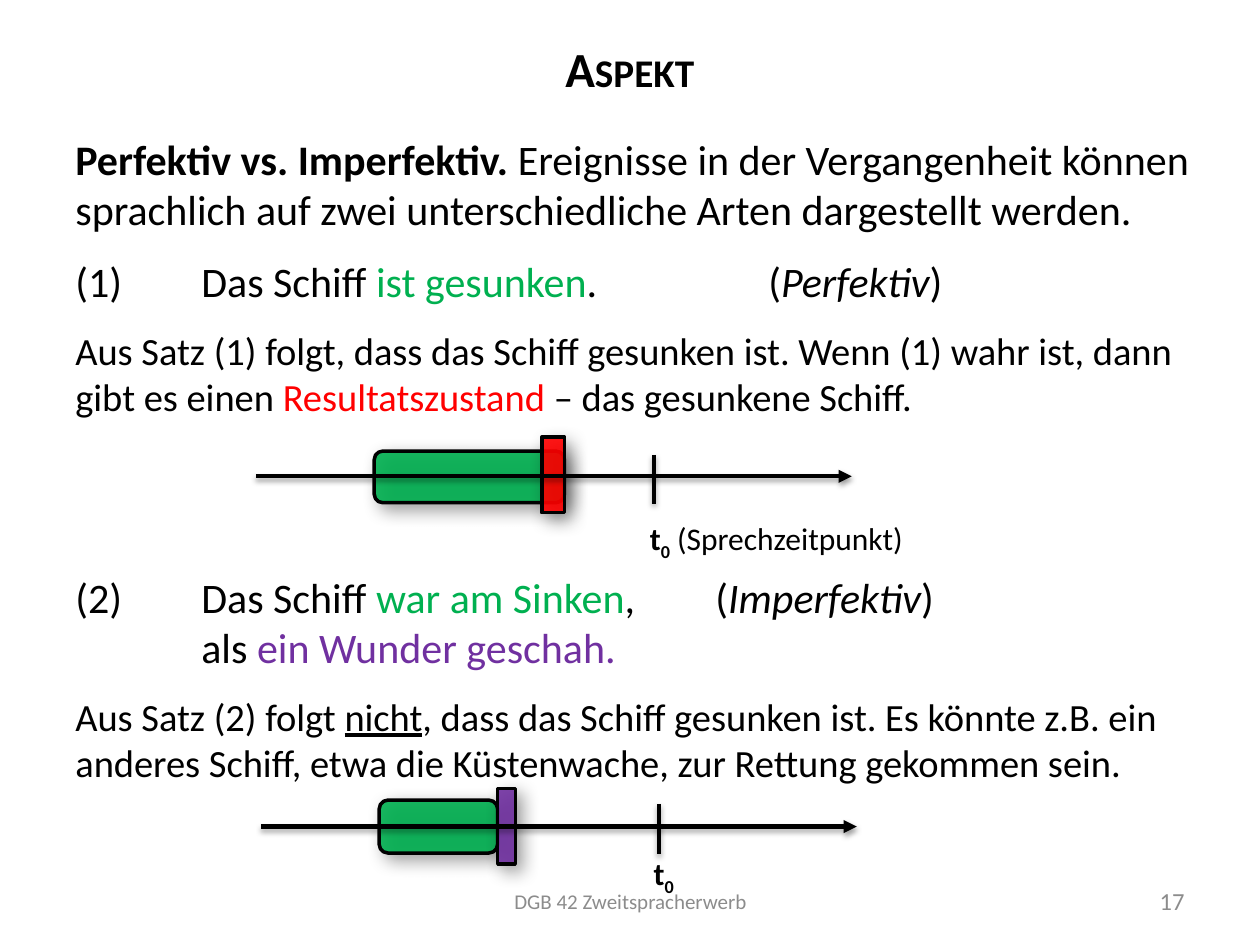
"""Build the slide on perfective and imperfective aspect."""
from dataclasses import dataclass

from lxml import etree
from pptx import Presentation
from pptx import util as u
from pptx.dml.color import RGBColor
from pptx.enum import shapes, text
from pptx.oxml.ns import qn

INK = {"black": "000000", "green": "00B050", "red": "FF0000",
       "violet": "7030A0", "grey": "8C8C8C"}
BOLD, ITAL = {"bold": True}, {"italic": True}
SUB = {"bold": True, "base": "-25000"}
LEFT, MID, RIGHT = text.PP_ALIGN.LEFT, text.PP_ALIGN.CENTER, text.PP_ALIGN.RIGHT
TOP, HALF = text.MSO_ANCHOR.TOP, text.MSO_ANCHOR.MIDDLE
BOX, LINE = (10, 5, 45, 40), (3.1, 1.6, 90, 38)


@dataclass
class Para:
    runs: list
    size: float
    before: float = 0
    tabs: tuple = ()
    align: int = LEFT


@dataclass
class Bar:
    kind: int
    hue: str
    at: tuple


@dataclass
class Axis:
    left: float
    y: float
    tick: tuple
    bars: list
    label: list
    spot: tuple


def color(name: str) -> RGBColor:
    """Look up a colour."""
    return RGBColor.from_string(INK[name])


def write(frame, paras: list, hue: str = "black", anchor=TOP) -> None:
    """Fill a text frame with formatted paragraphs."""
    frame.word_wrap, frame.vertical_anchor = True, anchor
    for i, item in enumerate(paras):
        para = frame.paragraphs[0] if i == 0 else frame.add_paragraph()
        para.alignment, para.space_before = item.align, u.Pt(item.before)
        if item.tabs:
            stops = etree.SubElement(para._p.get_or_add_pPr(), qn("a:tabLst"))
            for stop in item.tabs:
                etree.SubElement(stops, qn("a:tab"), pos=str(u.Inches(stop)), algn="l")
        for words, look in item.runs:
            if words == "\n":
                para.add_line_break()
                continue
            run = para.add_run()
            run.text = words
            style = {"name": "Calibri", "size": u.Pt(item.size), "bold": False, **look}
            run.font.color.rgb = color(style.pop("hue", hue))
            for key, raw in (("base", "baseline"), ("cap", "cap")):
                if key in style:
                    run.font._element.set(raw, style.pop(key))
            for key, value in style.items():
                setattr(run.font, key, value)


def label(home, at: tuple, paras: list, hue: str = "black", anchor=TOP) -> None:
    """Add a text box."""
    box = home.add_textbox(*map(u.Inches, at))
    write(box.text_frame, paras, hue, anchor)


def shade(shape, blur: float, dist: float, angle: int, alpha: int) -> None:
    """Give a shape an outer shadow."""
    prop = shape._element.spPr
    for old in prop.findall(qn("a:effectLst")):
        prop.remove(old)
    glow = etree.SubElement(etree.SubElement(prop, qn("a:effectLst")), qn("a:outerShdw"),
                            blurRad=str(u.Pt(blur)), dist=str(u.Pt(dist)),
                            dir=str(angle * 60000), algn="tl", rotWithShape="0")
    tint = etree.SubElement(glow, qn("a:srgbClr"), val=INK["black"])
    etree.SubElement(tint, qn("a:alpha"), val=str(alpha * 1000))


def block(home, bar: Bar) -> None:
    """Draw one phase of an event."""
    shape = home.add_shape(bar.kind, *map(u.Inches, bar.at))
    shape.fill.solid()
    shape.fill.fore_color.rgb = color(bar.hue)
    tint = shape._element.spPr.find(qn("a:solidFill")).find(qn("a:srgbClr"))
    etree.SubElement(tint, qn("a:alpha"), val="90000")
    shape.line.color.rgb, shape.line.width = color("black"), u.Pt(2)
    shade(shape, *BOX)


def stroke(home, ends: tuple, width: float, arrow: bool = False) -> None:
    """Draw a straight line, with an arrowhead if asked."""
    line = home.add_connector(shapes.MSO_CONNECTOR.STRAIGHT, *map(u.Inches, ends))
    line.line.color.rgb, line.line.width = color("black"), u.Pt(width)
    if arrow:
        etree.SubElement(line.line._get_or_add_ln(), qn("a:tailEnd"), type="triangle")
    shade(line, *LINE)


def draw(home, axis: Axis) -> None:
    """Draw a time axis as a group."""
    group = home.add_group_shape().shapes
    for bar in axis.bars:
        block(group, bar)
    stroke(group, (axis.left, axis.y, axis.left + 4.73, axis.y), 2.5, True)
    x = axis.left + 3.16
    stroke(group, (x, axis.tick[0], x, axis.tick[1]), 2)
    label(group, axis.spot, [Para(axis.label, 18)])


ROUND, RECT = shapes.MSO_SHAPE.ROUNDED_RECTANGLE, shapes.MSO_SHAPE.RECTANGLE
ZERO = [("t", BOLD), ("0", SUB)]
AXES = [
    Axis(2.03, 3.78, (3.61, 4),
         [Bar(ROUND, "green", (2.97, 3.58, 1.51, 0.41)),
          Bar(RECT, "red", (4.3, 3.47, 0.18, 0.6))],
         ZERO + [(" (Sprechzeitpunkt)", {})], (5.06, 4.07, 2.33, 0.35)),
    Axis(2.07, 6.56, (6.38, 6.78),
         [Bar(ROUND, "green", (3.01, 6.35, 0.94, 0.42)),
          Bar(RECT, "violet", (3.95, 6.26, 0.14, 0.6))],
         ZERO, (5.09, 6.73, 2.33, 0.4)),
]
BODY = [
    Para([("Perfektiv vs. Imperfektiv.", BOLD),
          (" Ereignisse in der Vergangenheit können sprachlich auf zwei "
           "unterschiedliche Arten dargestellt werden.", {})], 24, 6),
    Para([("(1)\tDas Schiff ", {}), ("ist gesunken", {"hue": "green"}),
          (".\t(", {}), ("Perfektiv", ITAL), (")", {})], 24, 12, (1, 5.5)),
    Para([("Aus Satz (1) folgt, dass das Schiff gesunken ist. Wenn (1) wahr ist, "
           "dann gibt es einen ", {}), ("Resultatszustand", {"hue": "red"}),
          (" – das gesunkene Schiff.", {})], 22, 12),
    Para([("(2)\tDas Schiff ", {}), ("war am Sinken", {"hue": "green"}),
          (",\t(", {}), ("Imperfektiv", ITAL), (")", {}), ("\n", {}),
          ("\tals ", {}), ("ein Wunder geschah.", {"hue": "violet"})],
         24, 87, (1, 5.08)),
    Para([("Aus Satz (2) folgt ", {}), ("nicht", {"underline": True}),
          (", dass das Schiff gesunken ist. Es könnte z.B. ein anderes Schiff, "
           "etwa die Küstenwache, zur Rettung gekommen sein.", {})], 22, 12),
]


def main() -> None:
    """Build and save the slide."""
    deck = Presentation()
    deck.slide_width, deck.slide_height = u.Inches(10), u.Inches(7.5)
    page = deck.slides.add_slide(deck.slide_layouts[5]).shapes
    head = page.title
    for key, value in {"left": 0.5, "top": 0.17, "width": 9, "height": 0.74}.items():
        setattr(head, key, u.Inches(value))
    write(head.text_frame, [Para([("Aspekt", {"bold": True, "cap": "small"})],
                                 28, align=MID)], anchor=HALF)
    label(page, (0.5, 1.01, 9.2, 5.73), BODY)
    label(page, (7.17, 6.95, 2.33, 0.4), [Para([("17", {})], 14, align=RIGHT)],
          "grey", HALF)
    label(page, (3.42, 6.95, 3.17, 0.4),
          [Para([("DGB 42 Zweitspracherwerb", {})], 12, align=MID)], "grey", HALF)
    for axis in AXES:
        draw(page, axis)
    deck.save("out.pptx")


if __name__ == "__main__":
    main()
